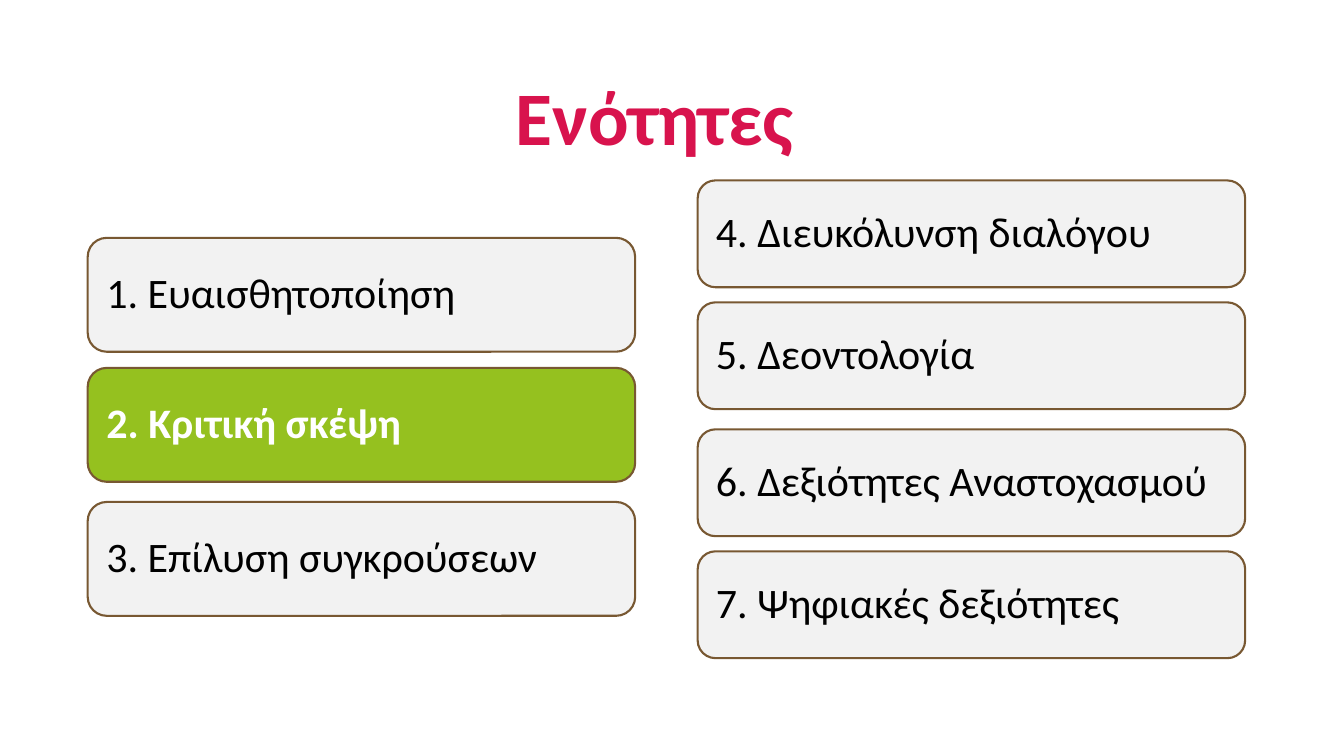
import pptx
import pptx.util
import pptx.dml.color
import pptx.enum.shapes
import pptx.enum.text

Inches = pptx.util.Inches
Pt = pptx.util.Pt
Align = pptx.enum.text.PP_ALIGN
Anchor = pptx.enum.text.MSO_ANCHOR
Shape = pptx.enum.shapes.MSO_SHAPE


def color(code):
    return pptx.dml.color.RGBColor.from_string(code)


class Deck:
    face = "Calibri"
    pink = "D8134D"
    gray = "F2F2F2"
    green = "95C11F"
    brown = "785832"
    black = "000000"
    white = "FFFFFF"

    def __init__(self, slide):
        self.slide = slide

    def label(self, shape, text, size, ink, bold, align, anchor, inset):
        frame = shape.text_frame
        frame.word_wrap = True
        frame.vertical_anchor = anchor
        frame.margin_left = frame.margin_right = Inches(inset)
        frame.margin_top = frame.margin_bottom = Inches(inset)
        line = frame.paragraphs[0]
        line.text = text
        line.alignment = align
        line.line_spacing = 0.9
        line.font.name = self.face
        line.font.size = Pt(size)
        line.font.bold = bold
        line.font.color.rgb = color(ink)

    def title(self, text, left, top, width, height):
        box = self.slide.shapes.add_textbox(
            Inches(left), Inches(top), Inches(width), Inches(height))
        self.label(box, text, 54, self.pink, True, Align.CENTER, Anchor.BOTTOM, 0.05)

    def card(self, text, left, top, width, height, active):
        card = self.slide.shapes.add_shape(
            Shape.ROUNDED_RECTANGLE,
            Inches(left), Inches(top), Inches(width), Inches(height))
        card.shadow.inherit = False
        card.fill.solid()
        card.fill.fore_color.rgb = color(self.green if active else self.gray)
        card.line.color.rgb = color(self.brown)
        card.line.width = Pt(1.5)
        ink = self.white if active else self.black
        self.label(card, text, 30, ink, active, Align.LEFT, Anchor.MIDDLE, 0.13)


def main():
    show = pptx.Presentation()
    show.slide_width = Inches(13.33)
    show.slide_height = Inches(7.5)
    deck = Deck(show.slides.add_slide(show.slide_layouts[6]))
    deck.title("Ενότητες", 0.01, -0.3, 12.97, 1.95)

    columns = [
        (0.87, 1.13, [
            (2.36, "Ευαισθητοποίηση"),
            (3.65, "Κριτική σκέψη"),
            (4.98, "Επίλυση συγκρούσεων"),
        ]),
        (6.92, 1.06, [
            (1.79, "Διευκόλυνση διαλόγου"),
            (3, "Δεοντολογία"),
            (4.26, "Δεξιότητες Αναστοχασμού"),
            (5.47, "Ψηφιακές δεξιότητες"),
        ]),
    ]
    active = 2
    number = 0
    for left, height, units in columns:
        for top, name in units:
            number += 1
            deck.card(f"{number}. {name}", left, top, 5.43, height, number == active)

    show.save("out.pptx")


if __name__ == "__main__":
    main()
